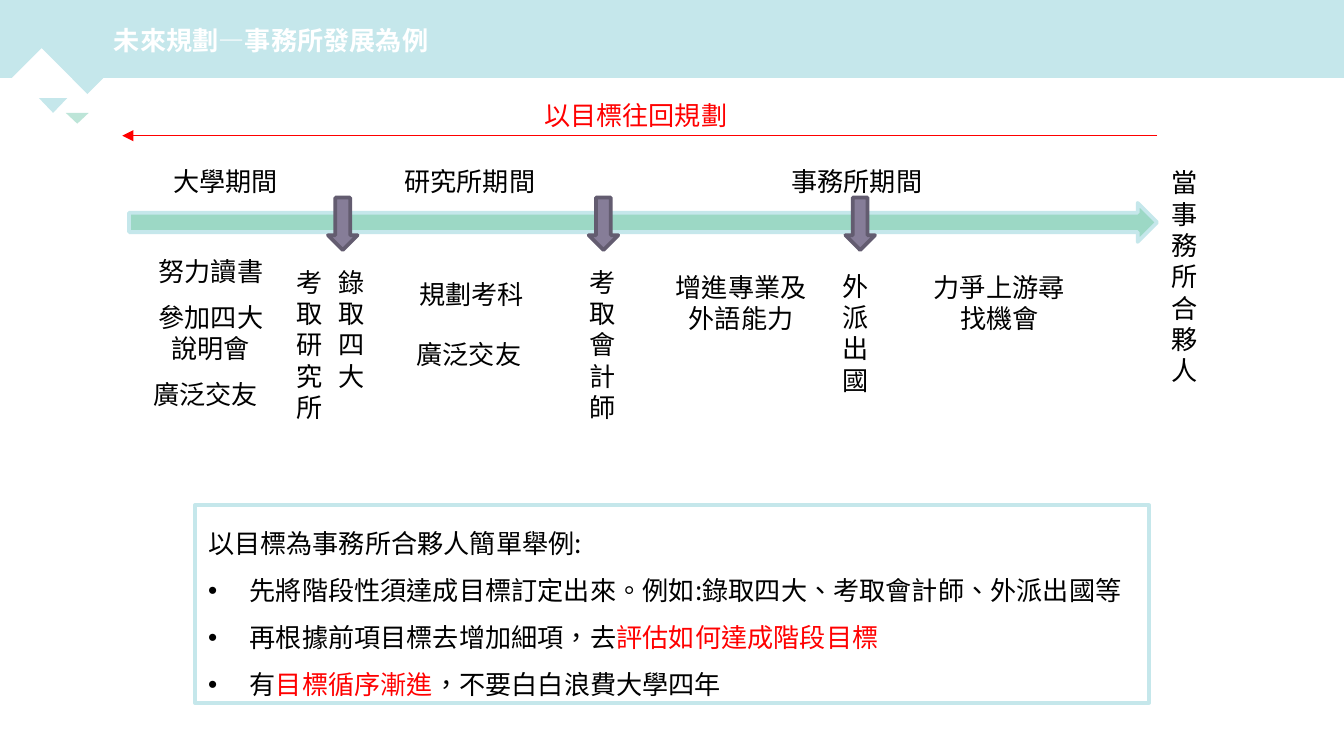
from lxml.etree import SubElement
from pptx import Presentation
from pptx.dml.color import RGBColor
from pptx.enum.shapes import MSO_CONNECTOR, MSO_SHAPE
from pptx.enum.text import MSO_ANCHOR, PP_ALIGN
from pptx.oxml.ns import qn
from pptx.util import Inches, Pt

SKY = RGBColor(0xC5, 0xE7, 0xEB)
MINT = RGBColor(0xBD, 0xE5, 0xD8)
GREEN = RGBColor(0x9C, 0xD8, 0xC5)
PLUM = RGBColor(0x86, 0x7D, 0x98)
DARK = RGBColor(0x63, 0x5C, 0x70)
RED = RGBColor(0xFF, 0, 0)
BLACK = RGBColor(0, 0, 0)
WHITE = RGBColor(0xFF, 0xFF, 0xFF)
FONT = "Noto Sans CJK SC"
TYPE = {"name": FONT, "size": Pt(14), "bold": False}
FRAME = {"word_wrap": True, "vertical_anchor": MSO_ANCHOR.TOP}
SLIM = {"margin_left": 0, "margin_right": 0}


def apply(item, values):
    """Set each named format value on an item."""
    for key, value in values.items():
        setattr(item, key, value)


def paint(shape, fill, line=None):
    """Give a shape a flat fill and an optional outline."""
    shape.shadow.inherit = False
    shape.fill.solid()
    shape.fill.fore_color.rgb = fill
    if line is None:
        shape.line.fill.background()
    else:
        shape.line.color.rgb = line
        shape.line.width = Pt(2)


def block(slide, kind, box, fill, line=None):
    """Add a painted preset shape."""
    shape = slide.shapes.add_shape(kind, *map(Inches, box))
    paint(shape, fill, line)
    return shape


def write(para, text, color=BLACK, **extra):
    """Append one styled run to a paragraph."""
    run = para.add_run()
    run.text = text
    apply(run.font, {**TYPE, **extra})
    run.font.color.rgb = color
    props = run.font._element
    props.set("lang", "zh-TW")
    SubElement(props, qn("a:ea"), typeface=FONT)


def label(slide, box, text, color=BLACK, align=PP_ALIGN.LEFT, **extra):
    """Add a text box holding one paragraph."""
    frame = slide.shapes.add_textbox(*map(Inches, box)).text_frame
    apply(frame, {**FRAME, **extra})
    para = frame.paragraphs[0]
    para.alignment = align
    if text:
        write(para, text, color)
    return para


def header(slide, left, top, width, height):
    """Draw the title band with its triangles."""
    block(slide, MSO_SHAPE.RECTANGLE, (left, top, width, height), SKY)
    peaks = [
        (0.48, 0.53, 0.34, 0.17, SKY),
        (0.49, 0.84, 0.17, 0.08, MINT),
        (0.08, 0.59, 0.46, -0.23, WHITE),
        (0.29, 0.73, 0.21, 0.11, SKY),
    ]
    for x, y, wide, deep, color in peaks:
        x, y = left + x, top + y
        path = slide.shapes.build_freeform(Inches(x), Inches(y))
        tip = (Inches(x + wide / 2), Inches(y + deep))
        path.add_line_segments([(Inches(x + wide), Inches(y)), tip])
        paint(path.convert_to_shape(), color)
    para = label(slide, (left + 0.75, top + 0.13, 6, 0.34), "")
    write(para, "未來規劃", WHITE, bold=True)
    write(para, "—", WHITE)
    write(para, "事務所發展為例", WHITE, bold=True)


def goal(slide, left, top, width):
    """Draw the backward planning arrow and its caption."""
    y = Inches(top + 0.32)
    line = slide.shapes.add_connector(
        MSO_CONNECTOR.STRAIGHT, Inches(left + width), y, Inches(left), y)
    line.line.color.rgb = RED
    line.line.width = Pt(0.75)
    props = line._element.spPr
    SubElement(props.find(qn("a:ln")), qn("a:tailEnd"), type="triangle")
    SubElement(props, qn("a:effectLst"))
    label(slide, (left + 3.04, top, 1.66, 0.34), "以目標往回規劃", RED)


def timeline(slide, left, top, width):
    """Draw the stages, milestones and tasks along the arrow."""
    block(slide, MSO_SHAPE.RIGHT_ARROW,
          (left, top + 0.34, width, 0.29), GREEN, SKY)
    for x in (1.48, 3.42, 5.33):
        block(slide, MSO_SHAPE.DOWN_ARROW,
              (left + x, top + 0.3, 0.22, 0.39), PLUM, DARK)
    stages = [(0.23, 1.1, "大學期間"), (1.95, 1.29, "研究所期間"),
              (4.83, 1.29, "事務所期間")]
    for x, wide, text in stages:
        label(slide, (left + x, top + 0.01, wide, 0.34), text)
    marks = [(1.25, 0.76, "考取研究所"), (1.56, 0.76, "錄取四大"),
             (3.43, 0.76, "考取會計師"), (5.31, 0.79, "外派出國"),
             (7.76, 0.02, "當事務所合夥人")]
    for x, y, text in marks:
        tall = 0.1 + 0.235 * len(text)
        label(slide, (left + x, top + y, 0.2, tall), text, **SLIM)
    tasks = [(0.06, 0.68, 1.1, "努力讀書"), (0.06, 1.02, 1.1, "參加四大說明會"),
             (0.02, 1.6, 1.1, "廣泛交友"), (2, 0.85, 1.1, "規劃考科"),
             (1.98, 1.3, 1.1, "廣泛交友"), (3.91, 0.8, 1.29, "增進專業及外語能力"),
             (5.83, 0.8, 1.29, "力爭上游尋找機會")]
    for x, y, wide, text in tasks:
        tall = 0.57 if len(text) > 5 else 0.34
        label(slide, (left + x, top + y, wide, tall), text,
              align=PP_ALIGN.CENTER)


def notes(slide, left, top, width, height):
    """Draw the framed example with its bullets."""
    box = block(slide, MSO_SHAPE.RECTANGLE,
                (left, top, width, height), WHITE, SKY)
    frame = box.text_frame
    apply(frame, {**FRAME, "word_wrap": False})
    lines = [
        [("以目標為事務所合夥人簡單舉例:", BLACK)],
        [("先將階段性須達成目標訂定出來。例如:錄取四大、考取會計師、外派出國等", BLACK)],
        [("再根據前項目標去增加細項，去", BLACK), ("評估如何達成階段目標", RED)],
        [("有", BLACK), ("目標循序漸進", RED), ("，不要白白浪費大學四年", BLACK)],
    ]
    for i, runs in enumerate(lines):
        para = frame.add_paragraph() if i else frame.paragraphs[0]
        apply(para, {"alignment": PP_ALIGN.LEFT, "line_spacing": 1.5})
        if i:
            props = para._p.get_or_add_pPr()
            props.set("marL", str(Inches(0.31)))
            props.set("indent", str(-Inches(0.31)))
            SubElement(props, qn("a:buFont"), typeface="Arial")
            SubElement(props, qn("a:buChar"), char="•")
        for text, color in runs:
            write(para, text, color)


def main():
    """Build and save the slide."""
    deck = Presentation()
    wide = Inches(10)
    apply(deck, {"slide_width": wide, "slide_height": wide * 9 // 16})
    slide = deck.slides.add_slide(deck.slide_layouts[6])
    header(slide, 0, 0, 10, 0.58)
    timeline(slide, 0.96, 1.17, 7.65)
    goal(slide, 0.91, 0.69, 7.7)
    notes(slide, 1.45, 3.76, 7.1, 1.47)
    deck.save("out.pptx")


if __name__ == "__main__":
    main()
